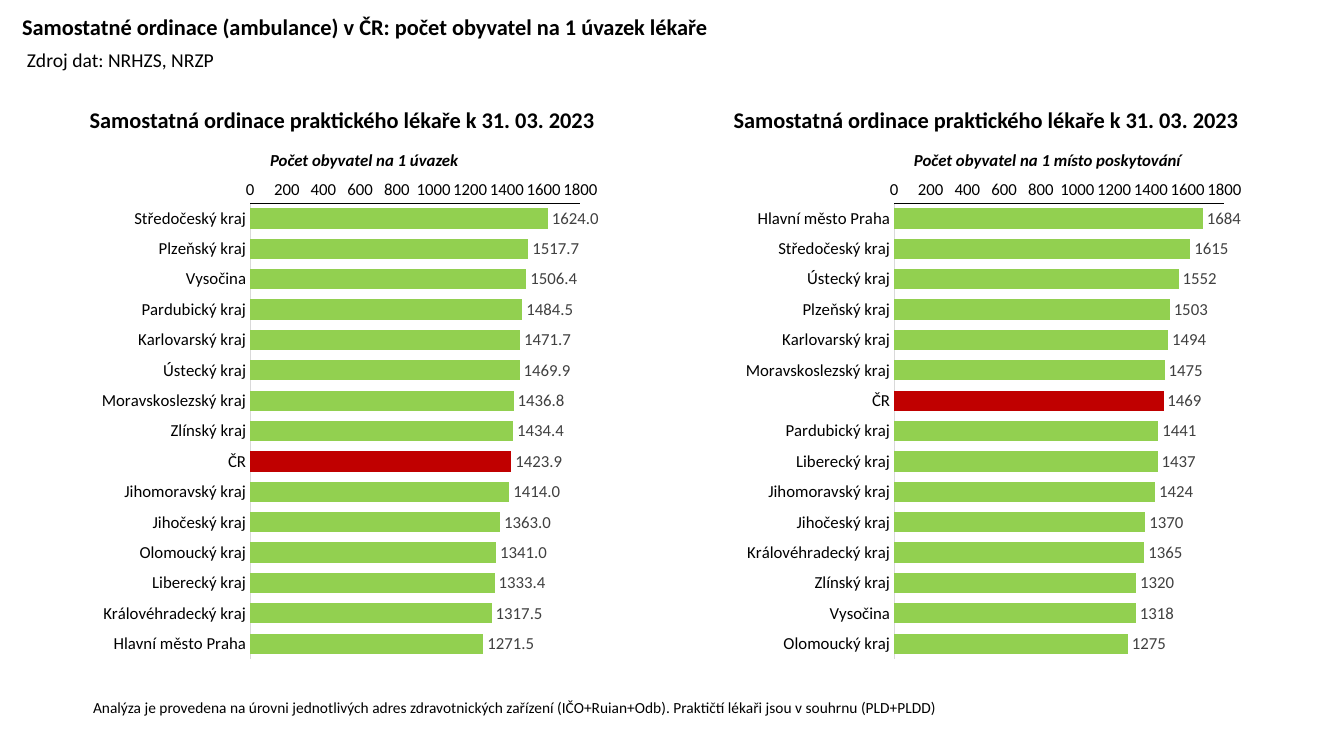
from dataclasses import dataclass

import pptx
import pptx.chart.data
import pptx.dml.color
import pptx.enum.chart
import pptx.enum.text
import pptx.util
from lxml import etree
from pptx.util import Pt

FONT = "Calibri"
BLACK, GRAY, AXIS_GRAY = "000000", "404040", "D9D9D9"
GREEN, RED = "92D050", "C00000"
COUNTRY = "ČR"
HEADING = "Samostatná ordinace praktického lékaře k 31. 03. 2023"
PANEL_STEP = 460


@dataclass
class Label:
    text: str
    x: float
    y: float
    w: float
    h: float
    size: float
    bold: bool = False
    italic: bool = False
    centered: bool = False
    wrap: bool = False


@dataclass
class Panel:
    subtitle: str
    subtitle_width: float
    number_format: str
    values: dict[str, float]


PANELS = [
    Panel("Počet obyvatel na 1 úvazek", 151.2, "0.0", {
        "Středočeský kraj": 1624, "Plzeňský kraj": 1517.7, "Vysočina": 1506.4,
        "Pardubický kraj": 1484.5, "Karlovarský kraj": 1471.7,
        "Ústecký kraj": 1469.9, "Moravskoslezský kraj": 1436.8,
        "Zlínský kraj": 1434.4, COUNTRY: 1423.9, "Jihomoravský kraj": 1414,
        "Jihočeský kraj": 1363, "Olomoucký kraj": 1341,
        "Liberecký kraj": 1333.4, "Královéhradecký kraj": 1317.5,
        "Hlavní město Praha": 1271.5,
    }),
    Panel("Počet obyvatel na 1 místo poskytování", 208, "0", {
        "Hlavní město Praha": 1684, "Středočeský kraj": 1615,
        "Ústecký kraj": 1552, "Plzeňský kraj": 1503, "Karlovarský kraj": 1494,
        "Moravskoslezský kraj": 1475, COUNTRY: 1469, "Pardubický kraj": 1441,
        "Liberecký kraj": 1437, "Jihomoravský kraj": 1424,
        "Jihočeský kraj": 1370, "Královéhradecký kraj": 1365,
        "Zlínský kraj": 1320, "Vysočina": 1318, "Olomoucký kraj": 1275,
    }),
]


def rgb(color: str) -> pptx.dml.color.RGBColor:
    return pptx.dml.color.RGBColor.from_string(color)


def set_font(font, size: float, color: str = BLACK, bold: bool = False,
             italic: bool = False) -> None:
    font.name, font.size = FONT, Pt(size)
    font.bold, font.italic = bold, italic
    font.color.rgb = rgb(color)


def set_fill(fill, color: str) -> None:
    fill.solid()
    fill.fore_color.rgb = rgb(color)


def add_label(s, label: Label) -> None:
    sp = s.shapes.add_textbox(Pt(label.x), Pt(label.y), Pt(label.w), Pt(label.h))
    tf = sp.text_frame
    tf.word_wrap = label.wrap
    tf.auto_size = pptx.enum.text.MSO_AUTO_SIZE.SHAPE_TO_FIT_TEXT
    p = tf.paragraphs[0]
    p.text = label.text
    if label.centered:
        p.alignment = pptx.enum.text.PP_ALIGN.CENTER
    set_font(p.font, label.size, bold=label.bold, italic=label.italic)


def set_title(s, text: str) -> None:
    sp = s.shapes.title
    sp.left, sp.top, sp.width, sp.height = Pt(8.6), Pt(7.9), Pt(828), Pt(49.7)
    tf = sp.text_frame
    tf.word_wrap = True
    tf.vertical_anchor = pptx.enum.text.MSO_ANCHOR.TOP
    p = tf.paragraphs[0]
    p.text = text
    p.alignment = pptx.enum.text.PP_ALIGN.LEFT
    p.line_spacing = 0.9
    set_font(p.font, 16, bold=True)


def fix_plot_area(chart, x: float, y: float, w: float, h: float) -> None:
    """Place the inner plot area, in fractions of the chart."""
    plot_area = chart.plots[0]._element.getparent()
    ns = etree.QName(plot_area).namespace
    for old in plot_area.findall(f"{{{ns}}}layout"):
        plot_area.remove(old)
    layout = etree.Element(f"{{{ns}}}layout")
    manual = etree.SubElement(layout, f"{{{ns}}}manualLayout")
    settings = {"layoutTarget": "inner", "xMode": "edge", "yMode": "edge",
                "x": x, "y": y, "w": w, "h": h}
    for tag, value in settings.items():
        etree.SubElement(manual, f"{{{ns}}}{tag}", val=str(value))
    plot_area.insert(0, layout)


def style_axis(axis, line_color: str) -> None:
    axis.has_major_gridlines = False
    axis.major_tick_mark = pptx.enum.chart.XL_TICK_MARK.NONE
    axis.minor_tick_mark = pptx.enum.chart.XL_TICK_MARK.NONE
    axis.format.line.color.rgb = rgb(line_color)
    axis.format.line.width = Pt(0.75)
    set_font(axis.tick_labels.font, 12)


def add_bar_chart(s, panel: Panel, x: float) -> None:
    data = pptx.chart.data.CategoryChartData()
    data.categories = list(panel.values)
    data.add_series("Series 1", list(panel.values.values()))
    chart = s.shapes.add_chart(
        pptx.enum.chart.XL_CHART_TYPE.BAR_CLUSTERED,
        Pt(x), Pt(120.2), Pt(368.6), Pt(357.8), data).chart
    chart.has_title = chart.has_legend = False
    set_font(chart.font, 10)
    fix_plot_area(chart, 0.307, 0.07, 0.64, 0.91)

    style_axis(chart.category_axis, AXIS_GRAY)
    chart.category_axis.reverse_order = True
    axis = chart.value_axis
    style_axis(axis, BLACK)
    axis.minimum_scale, axis.maximum_scale, axis.major_unit = 0, 1800, 200
    axis.tick_labels.number_format = "0"
    axis.tick_labels.number_format_is_linked = False

    plot = chart.plots[0]
    plot.gap_width = 50
    plot.vary_by_categories = False
    series = plot.series[0]
    series.invert_if_negative = False
    set_fill(series.format.fill, GREEN)
    country_bar = series.points[list(panel.values).index(COUNTRY)]
    set_fill(country_bar.format.fill, RED)

    labels = series.data_labels
    labels.show_value = True
    labels.position = pptx.enum.chart.XL_LABEL_POSITION.OUTSIDE_END
    labels.number_format = panel.number_format
    labels.number_format_is_linked = False
    set_font(labels.font, 12, GRAY)


def add_panel(s, panel: Panel, offset: float) -> None:
    add_bar_chart(s, panel, 65.5 + offset)
    add_label(s, Label(panel.subtitle, 185.8 + offset, 103.7,
                       panel.subtitle_width, 21.8, 12, bold=True, italic=True))
    add_label(s, Label(HEADING, 54.7 + offset, 72, 379.4, 26.6, 16,
                       bold=True, centered=True))


def main() -> None:
    prs = pptx.Presentation()
    prs.slide_width, prs.slide_height = Pt(960), Pt(540)
    s = prs.slides.add_slide(prs.slide_layouts[5])
    set_title(s, "Samostatné ordinace (ambulance) v ČR: počet obyvatel na 1 úvazek lékaře")
    add_label(s, Label("Zdroj dat: NRHZS, NRZP", 12.2, 31, 908, 24.2, 14, wrap=True))
    for i, panel in enumerate(PANELS):
        add_panel(s, panel, i * PANEL_STEP)
    add_label(s, Label(
        "Analýza je provedena na úrovni jednotlivých adres zdravotnických zařízení "
        "(IČO+Ruian+Odb). Praktičtí lékaři jsou v souhrnu (PLD+PLDD)",
        -64.8, 495.4, 865.4, 20.6, 11, centered=True, wrap=True))
    prs.save("out.pptx")


if __name__ == "__main__":
    main()
